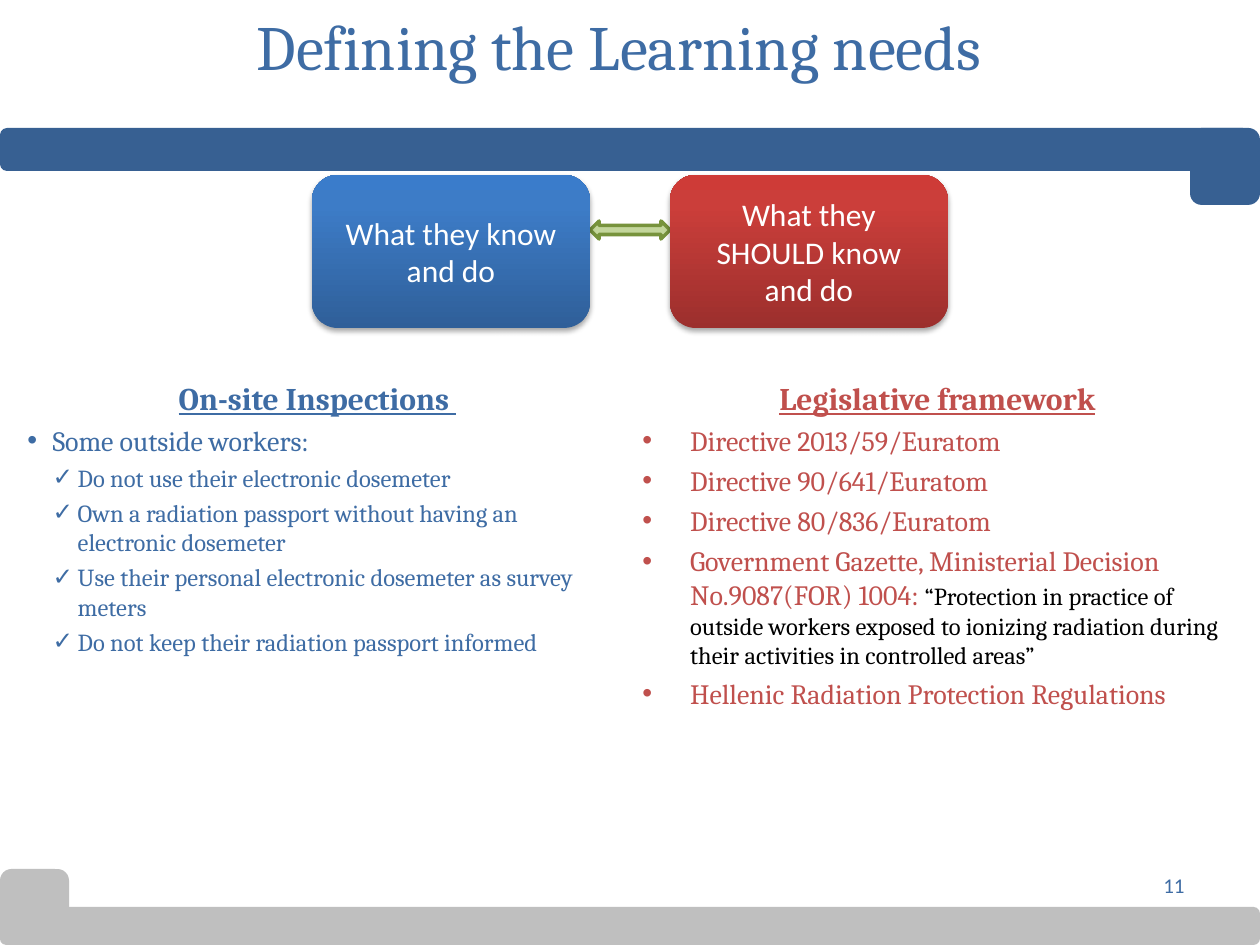
from lxml import etree
from pptx import Presentation
from pptx.dml.color import RGBColor
from pptx.enum.shapes import MSO_SHAPE
from pptx.enum.text import MSO_ANCHOR, PP_ALIGN
from pptx.oxml import parse_xml
from pptx.oxml.ns import nsdecls, qn
from pptx.util import Emu, Inches, Pt

SCALE = 914400 / 126
COLORS = {
    "bar": "376092", "footer": "BFBFBF", "blue": "3E6CA4", "red": "C0504D",
    "black": "000000", "white": "FFFFFF",
    "arrow": "C3D69B", "arrow_line": "77933C",
}
GRADIENTS = {
    "blue": ((0, "2F5F99"), (80, "3D7CC7"), (100, "3A7CCB")),
    "red": ((0, "9C2F2D"), (80, "CB3E3A"), (100, "CE3B37")),
}


def px(value):
    return Emu(round(value * SCALE))


def color(name):
    return RGBColor.from_string(COLORS[name])


def add_text(paragraph, text, size=16, font="Cambria", fill="blue", bold=False,
             underline=False, align=None, space=0, bullet=None, indent=None):
    """Add a run to a paragraph, with bullet and paragraph format if given."""
    if bullet:
        properties = paragraph._p.get_or_add_pPr()
        left, hanging = indent
        properties.set("marL", str(Inches(left)))
        properties.set("indent", str(-Inches(hanging)))
        etree.SubElement(properties, qn("a:buFont")).set("typeface", "Arial")
        etree.SubElement(properties, qn("a:buChar")).set("char", bullet)
    if align is not None:
        paragraph.alignment = align
    if space:
        paragraph.space_before = Pt(space)
    run = paragraph.add_run()
    run.text = text
    run.font.size = Pt(size)
    run.font.name = font
    run.font.bold = bold
    run.font.underline = underline
    run.font.color.rgb = color(fill)


def add_box(slide, box, anchor=MSO_ANCHOR.TOP):
    frame = slide.shapes.add_textbox(*map(px, box)).text_frame
    frame.word_wrap = True
    frame.vertical_anchor = anchor
    return frame


def add_plain_shape(slide, kind, box, fill, line=None):
    shape = slide.shapes.add_shape(kind, *map(px, box))
    shape.shadow.inherit = False
    shape.fill.solid()
    shape.fill.fore_color.rgb = color(fill)
    if line:
        shape.line.color.rgb = color(line)
        shape.line.width = Pt(2)
    else:
        shape.line.fill.background()
    return shape


def add_band(slide, bar, tab, fill):
    """A long bar with a rounded tab at one end."""
    for box in (bar, tab):
        add_plain_shape(slide, MSO_SHAPE.ROUNDED_RECTANGLE, box, fill)


def add_card(slide, box, text, gradient):
    """Rounded card with a vertical gradient and a soft shadow."""
    shape = add_plain_shape(slide, MSO_SHAPE.ROUNDED_RECTANGLE, box, gradient)
    properties = shape._element.spPr
    stops = "".join(
        f'<a:gs pos="{position * 1000}"><a:srgbClr val="{value}"/></a:gs>'
        for position, value in GRADIENTS[gradient])
    properties.replace(properties.find(qn("a:solidFill")), parse_xml(
        f'<a:gradFill {nsdecls("a")} rotWithShape="1"><a:gsLst>{stops}</a:gsLst>'
        '<a:lin ang="16200000" scaled="0"/></a:gradFill>'))
    properties.find(qn("a:effectLst")).append(parse_xml(
        f'<a:outerShdw {nsdecls("a")} blurRad="{Pt(3.1)}" dist="{Pt(1.8)}" '
        'dir="5400000" rotWithShape="0"><a:srgbClr val="000000">'
        '<a:alpha val="35000"/></a:srgbClr></a:outerShdw>'))
    frame = shape.text_frame
    frame.word_wrap = True
    frame.vertical_anchor = MSO_ANCHOR.MIDDLE
    add_text(frame.paragraphs[0], text, size=18, font="Calibri", fill="white",
             align=PP_ALIGN.CENTER)


def add_comparison(slide, box):
    """Two cards joined by a double arrow."""
    left, top, width, height = box
    card_width = 278
    gap = width - 2 * card_width
    add_plain_shape(slide, MSO_SHAPE.LEFT_RIGHT_ARROW,
                    (left + card_width, top + 46, gap, 18), "arrow", "arrow_line")
    cards = (("What they know and do", "blue"),
             ("What they SHOULD know and do", "red"))
    for index, (text, gradient) in enumerate(cards):
        card_left = left + index * (card_width + gap)
        add_card(slide, (card_left, top, card_width, height), text, gradient)


def add_list(slide, box, heading, fill, items):
    """Underlined heading above bullets; an item is a list of runs and a format."""
    frame = add_box(slide, box)
    add_text(frame.paragraphs[0], heading, size=18, fill=fill, bold=True,
             underline=True, align=PP_ALIGN.CENTER)
    for text, style, *tail in items:
        paragraph = frame.add_paragraph()
        add_text(paragraph, text, fill=fill, **style)
        for extra in tail:
            add_text(paragraph, extra, size=14, fill="black")


def main():
    presentation = Presentation()
    presentation.slide_width, presentation.slide_height = px(1260), px(945)
    slide = presentation.slides.add_slide(presentation.slide_layouts[6])

    # Header and footer bands
    add_band(slide, (0, 128, 1250, 43), (1190, 128, 70, 77), "bar")
    add_band(slide, (0, 907, 1260, 38), (0, 869, 69, 72), "footer")

    # Title and slide number
    title = add_box(slide, (52, 1, 1134, 127))
    add_text(title.paragraphs[0], "Defining the Learning needs", size=36,
             align=PP_ALIGN.CENTER)
    number = add_box(slide, (903, 860, 294, 50), MSO_ANCHOR.MIDDLE)
    add_text(number.paragraphs[0], "11", size=12, font="Calibri",
             align=PP_ALIGN.RIGHT)

    # Cards
    add_comparison(slide, (312, 175, 636, 153))

    # Lists
    wide = dict(bullet="•", indent=(0.38, 0.38), space=3.7)
    add_list(slide, (630, 373, 615, 367), "Legislative framework", "red", [
        ("Directive 2013/59/Euratom", wide),
        ("Directive 90/641/Euratom", wide),
        ("Directive 80/836/Euratom", wide),
        ("Government Gazette, Ministerial Decision No.9087(FOR) 1004: ", wide,
         "“Protection in practice of outside workers exposed to ionizing "
         "radiation during their activities in controlled areas”"),
        ("Hellenic Radiation Protection Regulations", wide),
    ])
    top_level = dict(bullet="•", indent=(0.2, 0.2), space=3.7)
    check = dict(bullet="✓", indent=(0.4, 0.2), space=3.2, size=14)
    add_list(slide, (15, 373, 605, 507), "On-site Inspections ", "blue", [
        ("Some outside workers:", top_level),
        ("Do not use their electronic dosemeter", check),
        ("Own a radiation passport without having an electronic dosemeter", check),
        ("Use their personal electronic dosemeter as survey meters", check),
        ("Do not keep their radiation passport informed", check),
    ])
    presentation.save("out.pptx")


if __name__ == "__main__":
    main()
